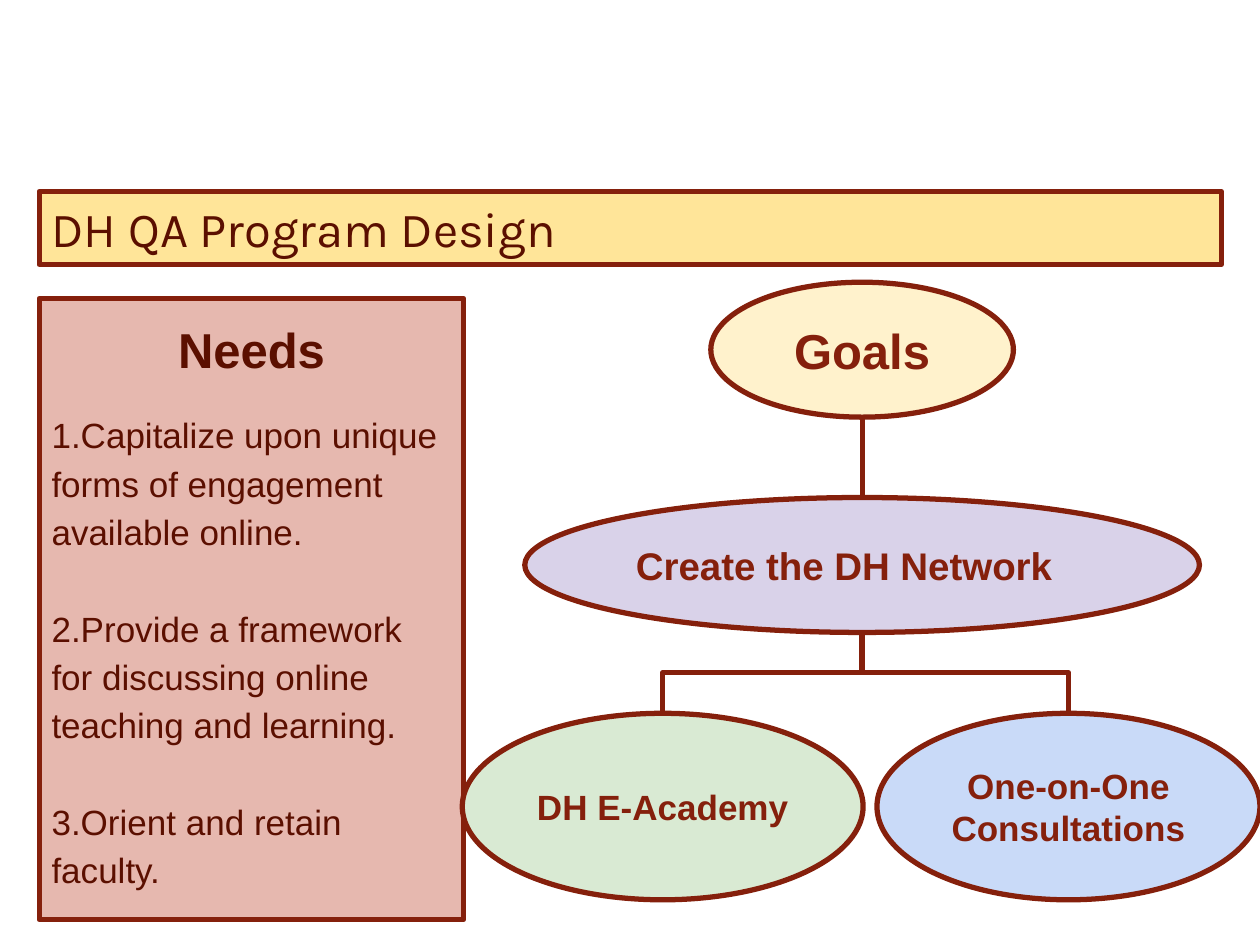
from lxml import etree
from pptx import Presentation
from pptx import util as u
from pptx.dml.color import RGBColor
from pptx.enum import shapes, text
from pptx.oxml import ns

BROWN, MAROON = "85200C", "5B0F00"
LEFT, CENTER = text.PP_ALIGN.LEFT, text.PP_ALIGN.CENTER


def colour(hex_string):
    return RGBColor.from_string(hex_string)


def add_panel(slide, kind, box, fill, anchor=text.MSO_ANCHOR.MIDDLE):
    panel = slide.shapes.add_shape(kind, *map(u.Cm, box))
    panel.shadow.inherit = False
    panel.fill.solid()
    panel.fill.fore_color.rgb = colour(fill)
    panel.line.color.rgb = colour(BROWN)
    panel.line.width = u.Pt(3)
    frame = panel.text_frame
    frame.word_wrap = True
    frame.vertical_anchor = anchor
    frame.margin_left = frame.margin_right = u.Cm(0.25)
    frame.margin_top = frame.margin_bottom = u.Cm(0.25)
    return panel


def write(paragraph, words, size, ink, bold=False, align=LEFT, font="Arial"):
    paragraph.text = words
    paragraph.alignment = align
    paragraph.font.name = font
    paragraph.font.size = u.Pt(size)
    paragraph.font.bold = bold
    paragraph.font.color.rgb = colour(ink)


def add_title(slide, box):
    banner = add_panel(slide, shapes.MSO_SHAPE.RECTANGLE, box, "FFE599")
    write(banner.text_frame.paragraphs[0], "DH QA Program Design", 28, MAROON,
          font="Karla")


def add_needs(slide, box):
    panel = add_panel(slide, shapes.MSO_SHAPE.RECTANGLE, box, "E6B8AF",
                      text.MSO_ANCHOR.TOP)
    heading = panel.text_frame.paragraphs[0]
    write(heading, "Needs", 28, MAROON, True, CENTER)
    heading.line_spacing = 1.15
    needs = [
        ("1.Capitalize upon unique forms of engagement available online.", 16.5),
        ("2.Provide a framework for discussing online teaching and learning.", 27.6),
        ("3.Orient and retain faculty.", 27.6),
    ]
    for words, gap in needs:
        need = panel.text_frame.add_paragraph()
        write(need, words, 20, MAROON)
        need.line_spacing = 1.15
        need.space_before = u.Pt(gap)


def add_goal(slide, box, fill, lines, size, align=CENTER):
    goal = add_panel(slide, shapes.MSO_SHAPE.OVAL, box, fill)
    frame = goal.text_frame
    for index, words in enumerate(lines):
        paragraph = frame.add_paragraph() if index else frame.paragraphs[0]
        write(paragraph, words, size, BROWN, True, align)
    return goal


def add_link(slide, kind, *ends):
    link = slide.shapes.add_connector(kind, *map(int, ends))
    link.line.color.rgb = colour(BROWN)
    link.line.width = u.Pt(3)
    etree.SubElement(link._element.spPr, ns.qn("a:effectLst"))
    return link


def add_branch(slide, parent, child):
    start_x, start_y = parent.left + parent.width / 2, parent.top + parent.height
    end_x, end_y = child.left + child.width / 2, child.top
    mid_x, mid_y = (start_x + end_x) / 2, (start_y + end_y) / 2
    half_drop, half_span = (end_y - start_y) / 2, abs(end_x - start_x) / 2
    side = 1 if end_x < start_x else -1
    branch = add_link(slide, shapes.MSO_CONNECTOR.ELBOW,
                      mid_x - side * half_drop, mid_y - half_span,
                      mid_x + side * half_drop, mid_y + half_span)
    quarter_turn = 90 if side > 0 else 270
    branch._element.spPr.find(ns.qn("a:xfrm")).set("rot", str(quarter_turn * 60000))


def add_goals(slide, box):
    left, top, width, height = box
    axis = left + 8.06
    row, leaf = 2.72, 3.76
    leaf_top = top + height - leaf
    goals = add_goal(slide, (axis - 3.05, top, 6.1, row), "FFF2CC", ["Goals"], 28)
    network = add_goal(slide, (axis - 6.8, top + 4.34, 13.6, row), "D9D2E9",
                       ["Create the DH Network"], 22, LEFT)
    academy = add_goal(slide, (left, leaf_top, 8.08, leaf), "D9EAD3",
                       ["DH E-Academy"], 20)
    consultations = add_goal(slide, (left + width - 7.72, leaf_top, 7.72, leaf),
                             "C9DAF8", ["One-on-One", "Consultations"], 20)
    add_link(slide, shapes.MSO_CONNECTOR.STRAIGHT, u.Cm(axis),
             goals.top + goals.height, u.Cm(axis), network.top)
    for child in (academy, consultations):
        add_branch(slide, network, child)


def main():
    deck = Presentation()
    deck.slide_width, deck.slide_height = u.Cm(25.4), u.Cm(19.05)
    slide = deck.slides.add_slide(deck.slide_layouts[6])
    add_title(slide, (0.79, 3.86, 23.83, 1.47))
    add_needs(slide, (0.79, 6.02, 8.56, 12.52))
    add_goals(slide, (9.32, 5.69, 16.08, 12.45))
    deck.save("out.pptx")


if __name__ == "__main__":
    main()
